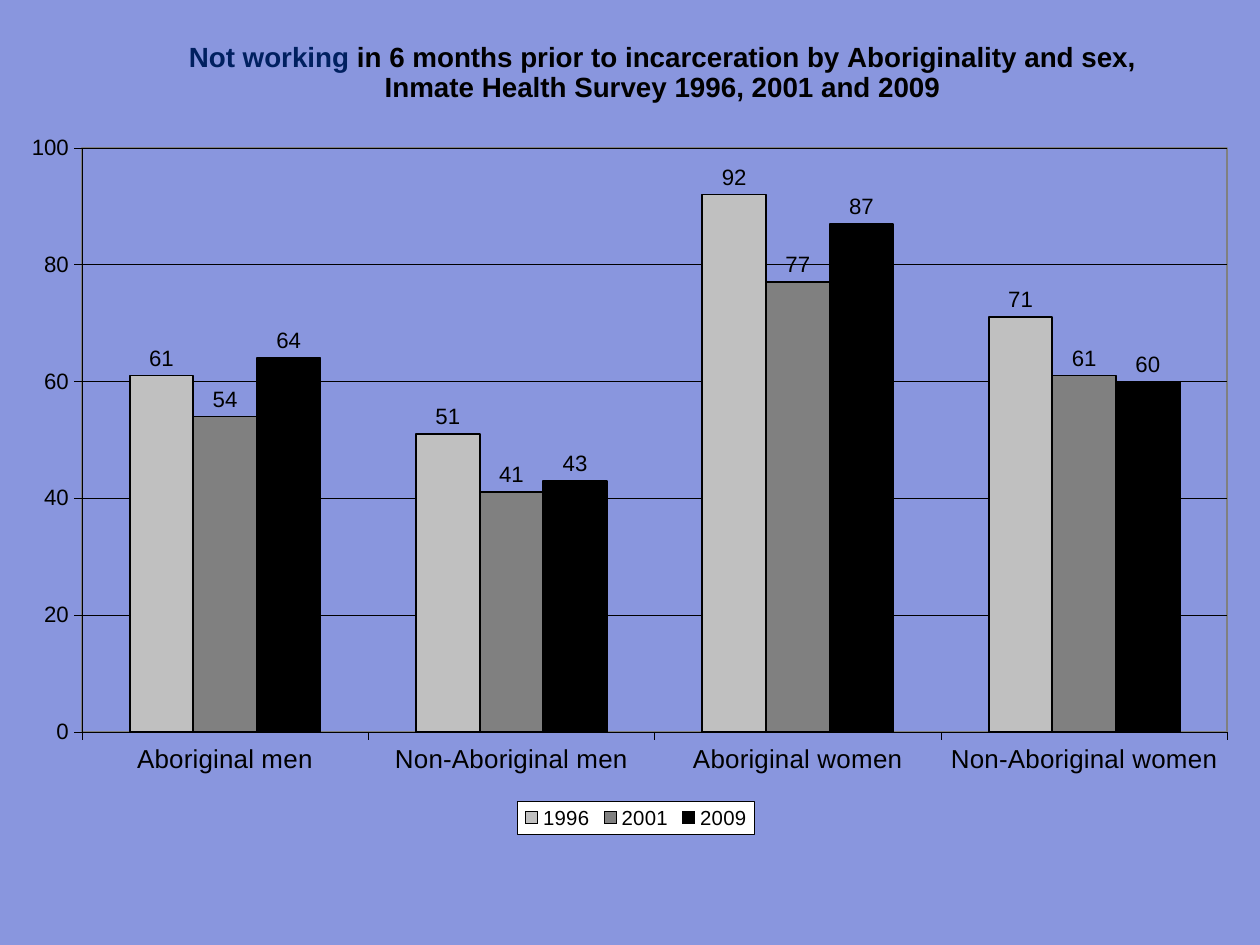
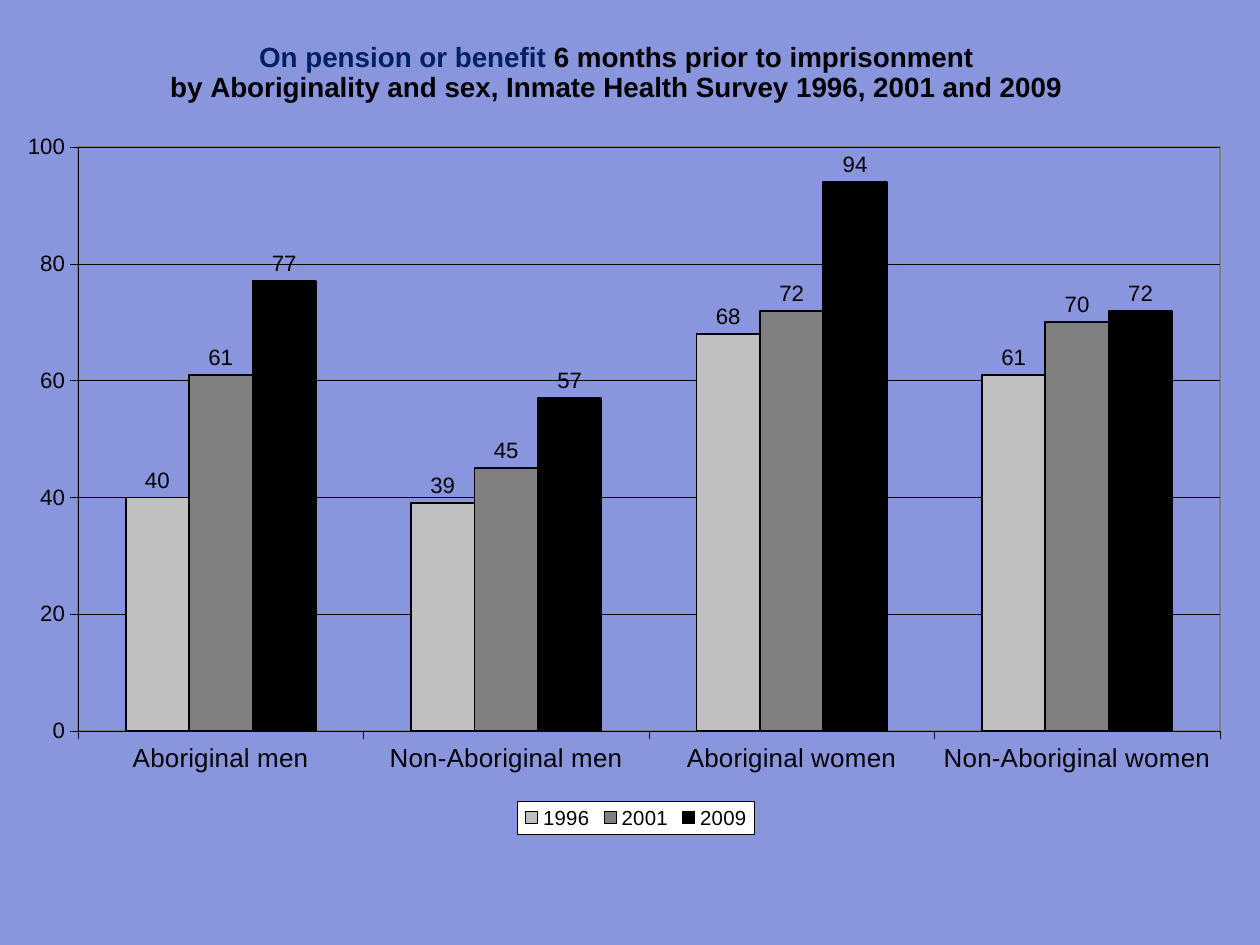
"""Build two slides of column charts on the Inmate Health Survey."""
from pptx import Presentation
from pptx.chart.data import CategoryChartData
from pptx.dml.color import RGBColor
from pptx.enum.chart import XL_CHART_TYPE as ChartType
from pptx.enum.chart import XL_LABEL_POSITION as LabelPosition
from pptx.enum.chart import XL_LEGEND_POSITION as LegendPosition
from pptx.enum.chart import XL_TICK_MARK as TickMark
from pptx.enum.text import PP_ALIGN as Align
from pptx.oxml import parse_xml
from pptx.oxml.ns import nsdecls, qn
from pptx.util import Pt

PERIWINKLE = RGBColor(0x89, 0x96, 0xDE)
NAVY = RGBColor(0x00, 0x20, 0x60)
BLACK = RGBColor(0x00, 0x00, 0x00)
WHITE = RGBColor(0xFF, 0xFF, 0xFF)
GREY = RGBColor(0x80, 0x80, 0x80)
SILVER = RGBColor(0xC0, 0xC0, 0xC0)

FONT = "Arial"
PAGE_SIZE = (680.4, 510.48)
CHART_BOX = (5.76, 5.76, 674.64, 446.4)
LEGEND_BOX = (273.8, 427, 128, 18)
HAIRLINE = 0.25
CATEGORIES = ("Aboriginal men", "Non-Aboriginal men",
              "Aboriginal women", "Non-Aboriginal women")
YEAR_COLOURS = {"1996": SILVER, "2001": GREY, "2009": BLACK}

PAGES = (
    {
        "highlight": "Not working",
        "rest": " in 6 months prior to incarceration by Aboriginality and sex, "
                "Inmate Health Survey 1996, 2001 and 2009",
        "title_at": (94, 13.5),
        "plot_box": (38.5, 74.1, 618.6, 315.6),
        "values": ((61, 51, 92, 71), (54, 41, 77, 61), (64, 43, 87, 60)),
    },
    {
        "highlight": "On pension or benefit",
        "rest": " 6 months prior to imprisonment\n"
                "by Aboriginality and sex, Inmate Health Survey 1996, 2001 and 2009",
        "title_at": (84, 13.5),
        "plot_box": (36.4, 73.7, 616.6, 315.6),
        "values": ((40, 39, 68, 61), (61, 45, 72, 70), (77, 57, 94, 72)),
    },
)


def style_font(font, size=12, colour=BLACK, bold=False):
    """Set the face, size, colour and weight of a font."""
    font.name = FONT
    font.size = Pt(size)
    font.bold = bold
    font.color.rgb = colour


def add_text(para, text, **font_format):
    """Add a formatted span to a paragraph."""
    span = para.add_run()
    span.text = text
    style_font(span.font, **font_format)


def style_line(line, width=HAIRLINE, colour=BLACK):
    """Set the width and colour of a line."""
    line.width = Pt(width)
    line.color.rgb = colour


def place_part(part, index, box, target=None):
    """Fix a chart part at a left, top, width and height in points."""
    for old in part.findall(qn("c:layout")):
        part.remove(old)
    target_xml = f'<c:layoutTarget val="{target}"/>' if target else ""
    sides = ("x", "y", "w", "h")[:len(box)]
    modes = "".join(f'<c:{side}Mode val="edge"/>' for side in sides[:2])
    extents = CHART_BOX[2:] * 2
    lengths = "".join(f'<c:{side} val="{length / extent:.5f}"/>'
                      for side, length, extent in zip(sides, box, extents))
    part.insert(index, parse_xml(
        f'<c:layout {nsdecls("c")}><c:manualLayout>{target_xml}{modes}{lengths}'
        '</c:manualLayout></c:layout>'))


def area_format(fill=None, line=None, width=HAIRLINE):
    """Return the fill and outline element of a chart area."""
    def paint(colour):
        if colour is None:
            return "<a:noFill/>"
        return f'<a:solidFill><a:srgbClr val="{colour}"/></a:solidFill>'
    return parse_xml(
        f'<c:spPr {nsdecls("c", "a")}>{paint(fill)}'
        f'<a:ln w="{Pt(width)}">{paint(line)}</a:ln></c:spPr>')


def add_title(chart, highlight, rest, title_at):
    """Add a chart title that opens with a highlighted phrase."""
    chart.has_title = True
    frame = chart.chart_title.text_frame
    para = frame.paragraphs[0]
    add_text(para, highlight, size=15, colour=NAVY, bold=True)
    for number, text in enumerate(rest.split("\n")):
        if number:
            para = frame.add_paragraph()
        add_text(para, text, size=15, bold=True)
    for para in frame.paragraphs:
        para.alignment = Align.CENTER
    chart.chart_title.include_in_layout = False
    place_part(chart._chartSpace.chart.find(qn("c:title")), 1, title_at)


def add_legend(chart):
    """Add the boxed legend below the plot."""
    chart.has_legend = True
    legend = chart.legend
    legend.position = LegendPosition.BOTTOM
    legend.include_in_layout = False
    part = chart._chartSpace.chart.find(qn("c:legend"))
    place_part(part, 1, LEGEND_BOX)
    part.append(area_format(fill=WHITE, line=BLACK))
    style_font(legend.font, size=11)


def style_axes(chart):
    """Format both axes and the gridlines."""
    for axis, size in ((chart.category_axis, 14), (chart.value_axis, 12)):
        axis.major_tick_mark = TickMark.OUTSIDE
        axis.minor_tick_mark = TickMark.NONE
        style_line(axis.format.line)
        style_font(axis.tick_labels.font, size=size)
    scale = chart.value_axis
    scale.minimum_scale, scale.maximum_scale, scale.major_unit = 0, 100, 20
    scale.has_major_gridlines = True
    style_line(scale.major_gridlines.format.line)


def style_columns(chart):
    """Colour the columns and label them with their values."""
    plot = chart.plots[0]
    plot.vary_by_categories = False
    plot.gap_width, plot.overlap = 150, 0
    for series in plot.series:
        series.format.fill.solid()
        series.format.fill.fore_color.rgb = YEAR_COLOURS[series.name]
        style_line(series.format.line, width=1)
        labels = series.data_labels
        labels.show_value = True
        labels.position = LabelPosition.OUTSIDE_END
        style_font(labels.font)


def add_chart_page(deck, highlight, rest, title_at, plot_box, values):
    """Add a page with one titled column chart."""
    page = deck.slides.add_slide(deck.slide_layouts.get_by_name("Blank"))
    data = CategoryChartData()
    data.categories = CATEGORIES
    for year, year_values in zip(YEAR_COLOURS, values):
        data.add_series(year, year_values)
    box = [Pt(length) for length in CHART_BOX]
    chart = page.shapes.add_chart(ChartType.COLUMN_CLUSTERED, *box, data).chart
    chart._chartSpace.chart.addnext(area_format())
    style_font(chart.font)
    add_title(chart, highlight, rest, title_at)
    add_legend(chart)
    style_axes(chart)
    style_columns(chart)
    plot_area = chart._chartSpace.chart.plotArea
    place_part(plot_area, 0, plot_box, target="inner")
    plot_area.append(area_format(line=GREY, width=1))


def main():
    """Build and save the deck."""
    deck = Presentation()
    deck.slide_width, deck.slide_height = (Pt(length) for length in PAGE_SIZE)
    backdrop = deck.slide_master.background.fill
    backdrop.solid()
    backdrop.fore_color.rgb = PERIWINKLE
    for content in PAGES:
        add_chart_page(deck, **content)
    deck.save("out.pptx")


if __name__ == "__main__":
    main()
